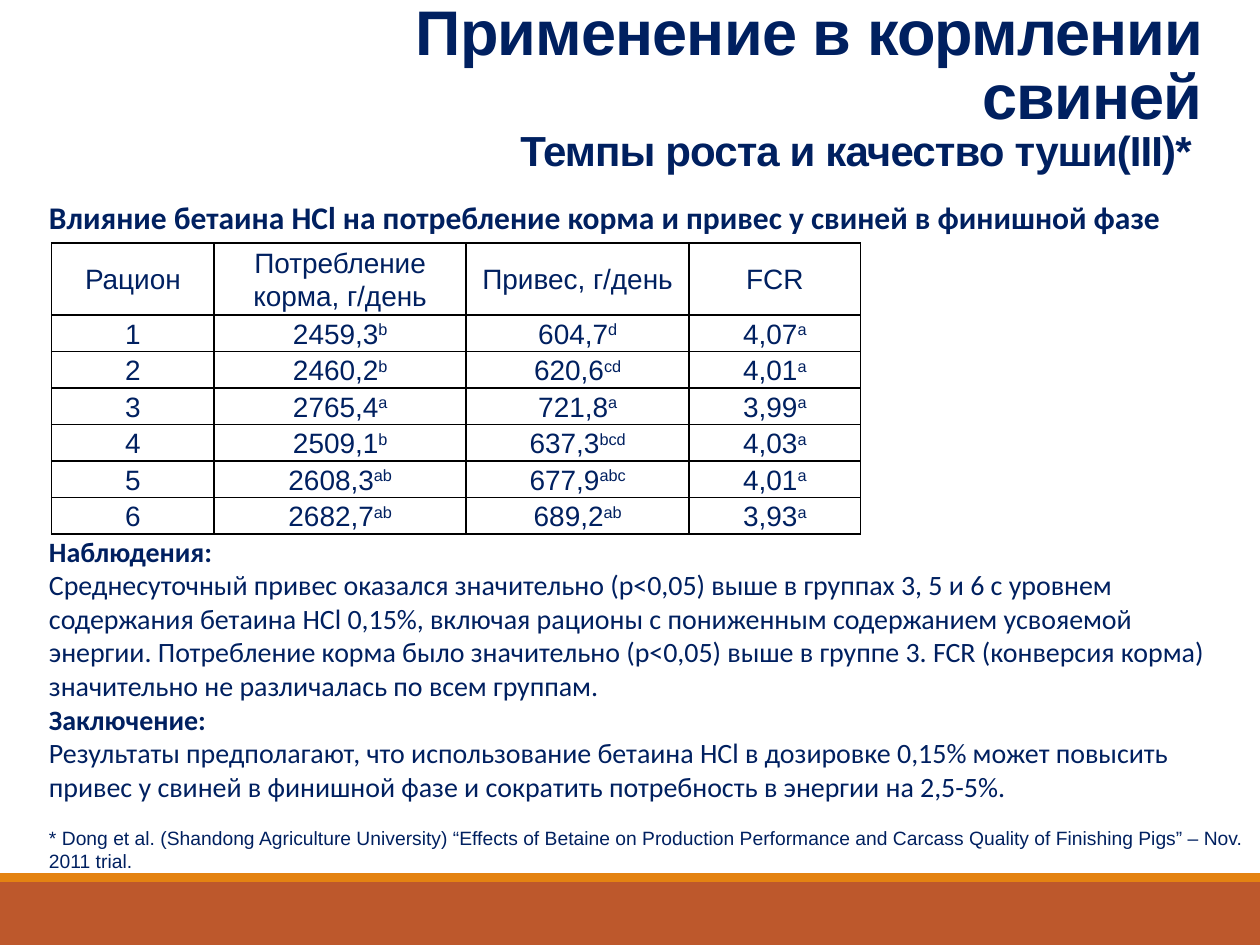
from dataclasses import dataclass

import lxml.etree
import pptx
import pptx.dml.color
import pptx.enum.shapes
import pptx.enum.text
import pptx.oxml
import pptx.oxml.ns
import pptx.util

Inches = pptx.util.Inches
Pt = pptx.util.Pt
ALIGN = pptx.enum.text.PP_ALIGN
ANCHOR = pptx.enum.text.MSO_ANCHOR


@dataclass(frozen=True)
class Theme:
    ink: str = "002060"
    paper: str = "FFFFFF"
    rule: str = "000000"
    band: str = "BD582C"
    accent: str = "E48312"
    heading_font: str = "Arial"
    body_font: str = "Calibri"
    title_size: int = 36
    subtitle_size: int = 24
    caption_size: int = 18
    text_size: int = 16
    note_size: int = 11


THEME = Theme()

HEADER = ["Рацион", "Потребление корма, г/день", "Привес, г/день", "FCR"]
# Each measured value is followed by its significance letters
DIETS = [
    ["1", "2459,3 b", "604,7 d", "4,07 a"],
    ["2", "2460,2 b", "620,6 cd", "4,01 a"],
    ["3", "2765,4 a", "721,8 a", "3,99 a"],
    ["4", "2509,1 b", "637,3 bcd", "4,03 a"],
    ["5", "2608,3 ab", "677,9 abc", "4,01 a"],
    ["6", "2682,7 ab", "689,2 ab", "3,93 a"],
]
FINDINGS = [
    ("Наблюдения:", True),
    ("Среднесуточный привес оказался значительно (p<0,05) выше в группах 3, 5 и 6 "
     "с уровнем содержания бетаина HCl 0,15%, включая рационы с пониженным содержанием "
     "усвояемой энергии. Потребление корма было значительно (p<0,05) выше в группе 3. "
     "FCR (конверсия корма) значительно не различалась по всем группам.", False),
    ("Заключение:", True),
    ("Результаты предполагают, что использование бетаина HCl в дозировке 0,15% может "
     "повысить привес у свиней в финишной фазе и сократить потребность в энергии "
     "на 2,5-5%.", False),
]


def rgb(value):
    return pptx.dml.color.RGBColor.from_string(value)


def apply(target, **values):
    for name, value in values.items():
        setattr(target, name, value)


def add_span(para, text, size, font, bold=False, **marks):
    """Add a run; marks are extra run attributes such as spc or baseline."""
    span = para.add_run()
    span.text = text
    apply(span.font, size=Pt(size), name=font, bold=bold)
    span.font.color.rgb = rgb(THEME.ink)
    for name, value in marks.items():
        span._r.get_or_add_rPr().set(name, str(value))


def add_band(page, box, color):
    band = page.shapes.add_shape(
        pptx.enum.shapes.MSO_SHAPE.RECTANGLE, *map(Inches, box))
    band.shadow.inherit = False
    band.fill.solid()
    band.fill.fore_color.rgb = rgb(color)
    band.line.fill.background()


def add_title(page, box):
    title = page.shapes.add_textbox(*map(Inches, box))
    title.fill.solid()
    title.fill.fore_color.rgb = rgb(THEME.paper)
    title.line.color.rgb = rgb(THEME.paper)
    title.line.width = Pt(0.75)
    apply(title.text_frame, word_wrap=True, vertical_anchor=ANCHOR.BOTTOM)
    para = title.text_frame.paragraphs[0]
    apply(para, alignment=ALIGN.RIGHT, line_spacing=0.85)
    add_span(para, "Применение в кормлении свиней",
             THEME.title_size, THEME.heading_font, True, spc=-50)
    para.add_line_break()
    add_span(para, "Темпы роста и качество туши(III)* ",
             THEME.subtitle_size, THEME.heading_font, True, spc=-50)


def add_text(page, box, lines, size, font, line_spacing=1.0):
    frame = page.shapes.add_textbox(*map(Inches, box)).text_frame
    apply(frame, word_wrap=True,
          auto_size=pptx.enum.text.MSO_AUTO_SIZE.SHAPE_TO_FIT_TEXT)
    for index, (text, bold) in enumerate(lines):
        para = frame.add_paragraph() if index else frame.paragraphs[0]
        para.line_spacing = line_spacing
        add_span(para, text, size, font, bold)


def add_borders(cell):
    properties = cell._tc.get_or_add_tcPr()
    for index, side in enumerate(("lnL", "lnR", "lnT", "lnB")):
        properties.insert(index, pptx.oxml.parse_xml(
            f'<a:{side} {pptx.oxml.ns.nsdecls("a")} w="{Pt(1)}">'
            f'<a:solidFill><a:srgbClr val="{THEME.rule}"/></a:solidFill></a:{side}>'))


def fill_cell(cell, value, letters=""):
    apply(cell, vertical_anchor=ANCHOR.MIDDLE, margin_left=Inches(0.07),
          margin_right=Inches(0.07), margin_top=0, margin_bottom=0)
    cell.fill.background()
    add_borders(cell)
    para = cell.text_frame.paragraphs[0]
    apply(para, alignment=ALIGN.CENTER, line_spacing=1.07)
    add_span(para, value, THEME.text_size, THEME.heading_font)
    if letters:
        add_span(para, letters, THEME.text_size, THEME.heading_font, baseline=30000)


def add_diet_table(page, left, top, widths, row_height):
    row_count = len(DIETS) + 1
    table = page.shapes.add_table(
        row_count, len(widths), Inches(left), Inches(top),
        Inches(sum(widths)), Inches(row_height * row_count)).table
    apply(table, first_row=False, horz_banding=False)
    for column, width in zip(table.columns, widths):
        column.width = Inches(width)
    for row in table.rows:
        row.height = Inches(row_height)
    for column, text in enumerate(HEADER):
        fill_cell(table.cell(0, column), text)
    for row, values in enumerate(DIETS, start=1):
        for column, value in enumerate(values):
            fill_cell(table.cell(row, column), *value.split())


def main():
    deck = pptx.Presentation()
    apply(deck, slide_width=Inches(10), slide_height=Inches(7.5))
    page = deck.slides.add_slide(deck.slide_layouts[6])

    # Footer bands
    add_band(page, (0, 7, 10, 0.5), THEME.band)
    add_band(page, (0, 6.93, 10, 0.07), THEME.accent)

    # Title and table caption
    add_title(page, (2.07, 0.19, 7.57, 1.25))
    caption = "Влияние бетаина HCl на потребление корма и привес у свиней в финишной фазе"
    add_text(page, (0.29, 1.56, 9.47, 0.37), [(caption, True)],
             THEME.caption_size, THEME.body_font, 0.9)

    # Citation
    citation = ("* Dong et al. (Shandong Agriculture University) “Effects of Betaine on "
                "Production Performance and Carcass Quality of Finishing Pigs” – Nov. 2011 trial.")
    add_text(page, (0.29, 6.51, 9.71, 0.47), [(citation, False)],
             THEME.note_size, THEME.heading_font)

    # Trial results and findings
    add_diet_table(page, 0.41, 1.93, (1.29, 2, 1.77, 1.36), 0.29)
    add_text(page, (0.29, 4.19, 9.41, 2.26), FINDINGS,
             THEME.text_size, THEME.body_font)

    deck.save("out.pptx")


if __name__ == "__main__":
    main()
